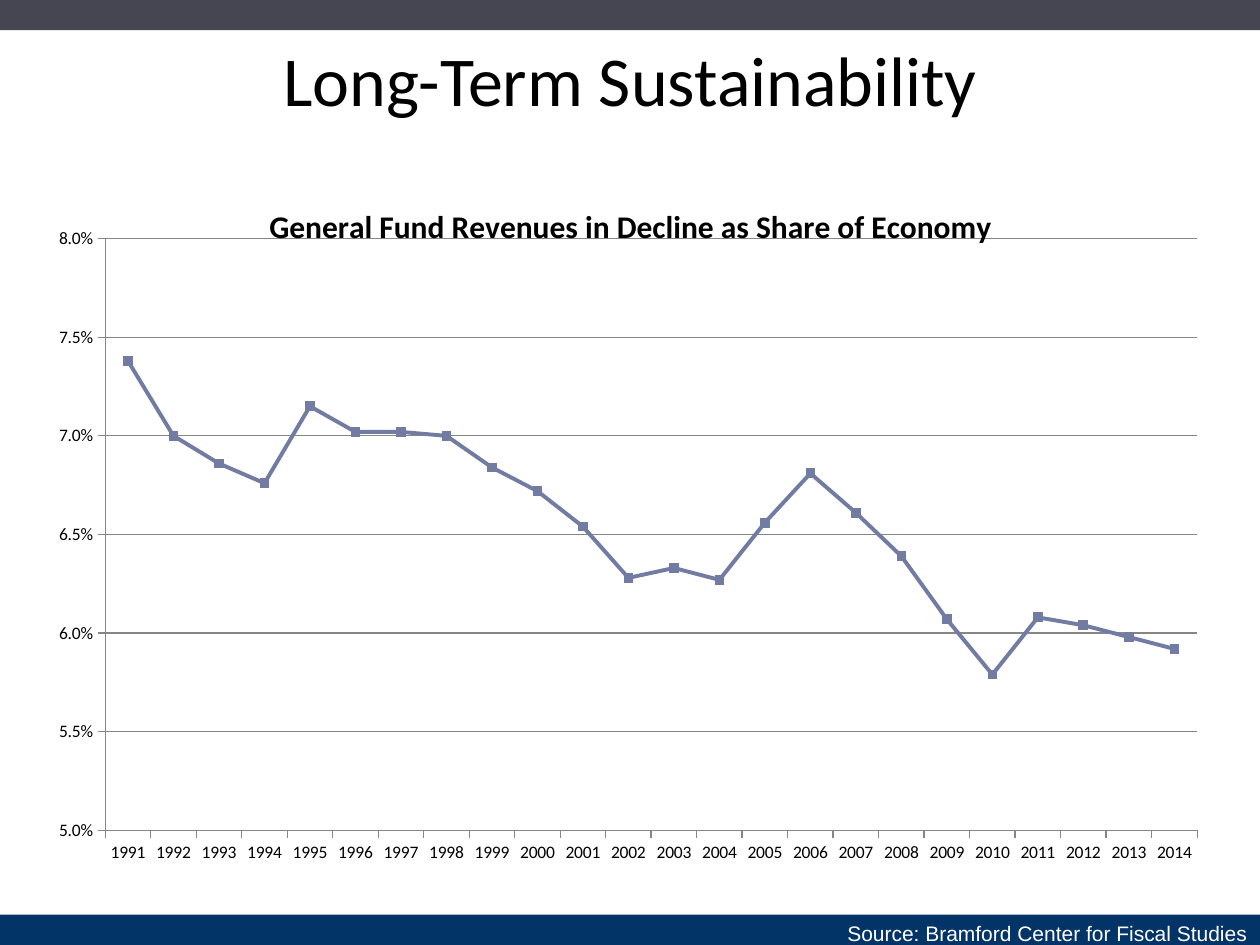
from dataclasses import dataclass

from lxml.etree import SubElement
from pptx import Presentation
from pptx.chart.chart import Chart
from pptx.chart.data import CategoryChartData
from pptx.dml.color import RGBColor
from pptx.enum.chart import XL_CHART_TYPE, XL_MARKER_STYLE, XL_TICK_MARK
from pptx.enum.shapes import MSO_SHAPE
from pptx.enum.text import MSO_ANCHOR, PP_ALIGN
from pptx.oxml.ns import qn
from pptx.slide import Slide
from pptx.text.text import TextFrame
from pptx.util import Inches, Pt

WIDTH, HEIGHT = Inches(10), Inches(7.5)
BAR_HEIGHT = Inches(0.24)
COLORS = {
    "header": "464653",
    "footer": "033468",
    "text": "000000",
    "source": "FFFFFF",
    "series": "727CA3",
    "axis": "868686",
}
FIRST_YEAR = 1991
REVENUE_SHARES = [
    0.0738, 0.07, 0.0686, 0.0676, 0.0715, 0.0702, 0.0702, 0.07,
    0.0684, 0.0672, 0.0654, 0.0628, 0.0633, 0.0627, 0.0656, 0.0681,
    0.0661, 0.0639, 0.0607, 0.0579, 0.0608, 0.0604, 0.0598, 0.0592,
]


@dataclass
class Bar:
    top: int
    color: str


BARS = [Bar(0, "header"), Bar(HEIGHT - BAR_HEIGHT, "footer")]


def rgb(name: str) -> RGBColor:
    return RGBColor.from_string(COLORS[name])


def draw_bar(slide: Slide, bar: Bar) -> None:
    shape = slide.shapes.add_shape(MSO_SHAPE.RECTANGLE, 0, bar.top, WIDTH, BAR_HEIGHT)
    shape.shadow.inherit = False
    shape.fill.solid()
    shape.fill.fore_color.rgb = rgb(bar.color)
    shape.line.fill.background()


def write(frame: TextFrame, text: str, *, font: str, size: float, color: str,
          align: PP_ALIGN = PP_ALIGN.CENTER, bold: bool = False) -> None:
    frame.text = text
    paragraph = frame.paragraphs[0]
    paragraph.alignment = align
    run_font = paragraph.runs[0].font
    run_font.name, run_font.size, run_font.bold = font, Pt(size), bold
    run_font.color.rgb = rgb(color)


def place(parent, **percents: float) -> None:
    """Set a manual chart layout, in percent of the chart's size."""
    layout = parent.find(qn("c:layout"))
    if layout is None:
        layout = parent.makeelement(qn("c:layout"))
        position = 1 if parent.tag == qn("c:title") else 0
        parent.insert(position, layout)
    for child in list(layout):
        layout.remove(child)
    manual = SubElement(layout, qn("c:manualLayout"))
    if "w" in percents:
        SubElement(manual, qn("c:layoutTarget")).set("val", "inner")
    for side in ("x", "y"):
        SubElement(manual, qn(f"c:{side}Mode")).set("val", "edge")
    for key, percent in percents.items():
        SubElement(manual, qn(f"c:{key}")).set("val", f"{percent / 100:.3f}")


def format_axes(chart: Chart) -> None:
    value_axis = chart.value_axis
    value_axis.minimum_scale, value_axis.maximum_scale = 0.05, 0.08
    value_axis.major_unit = 0.005
    value_axis.tick_labels.number_format = "0.0%"
    value_axis.tick_labels.number_format_is_linked = False
    value_axis.has_major_gridlines = True
    for axis in (chart.category_axis, value_axis):
        axis.major_tick_mark = XL_TICK_MARK.OUTSIDE
        axis.minor_tick_mark = XL_TICK_MARK.NONE
    for line in (chart.category_axis.format.line, value_axis.format.line,
                 value_axis.major_gridlines.format.line):
        line.color.rgb = rgb("axis")
        line.width = Pt(0.75)


def draw_chart(slide: Slide) -> None:
    data = CategoryChartData(number_format="0.0%")
    data.categories = [str(FIRST_YEAR + index) for index in range(len(REVENUE_SHARES))]
    data.add_series("Series 1", REVENUE_SHARES)
    chart = slide.shapes.add_chart(
        XL_CHART_TYPE.LINE_MARKERS, Inches(0.31), Inches(1.44),
        Inches(9.38), Inches(5.6), data).chart
    chart.has_legend = False
    chart.font.name, chart.font.size = "Calibri", Pt(10)
    chart.font.color.rgb = rgb("text")

    chart.has_title = True
    write(chart.chart_title.text_frame,
          "General Fund Revenues in Decline as Share of Economy",
          font="Calibri", size=18, color="text", bold=True)
    chart.chart_title.include_in_layout = True
    format_axes(chart)

    plot = chart.plots[0]
    plot.vary_by_categories = False
    series = plot.series[0]
    series.smooth = False
    series.format.line.color.rgb = rgb("series")
    series.format.line.width = Pt(2.25)
    series.marker.style, series.marker.size = XL_MARKER_STYLE.SQUARE, 5
    series.marker.format.fill.solid()
    series.marker.format.fill.fore_color.rgb = rgb("series")
    series.marker.format.line.color.rgb = rgb("series")

    chart_element = chart.element.find(qn("c:chart"))
    place(chart_element.find(qn("c:title")), x=19, y=2.4)
    place(chart_element.find(qn("c:plotArea")), x=5.6, y=8.1, w=92.4, h=83.9)


def main() -> None:
    presentation = Presentation()
    presentation.slide_width, presentation.slide_height = WIDTH, HEIGHT
    slide = presentation.slides.add_slide(presentation.slide_layouts.get_by_name("Title Only"))
    for bar in BARS:
        draw_bar(slide, bar)

    title = slide.shapes.title
    title.left, title.top = Inches(0.5), 0
    title.width, title.height = Inches(9), Inches(1.25)
    title.text_frame.vertical_anchor = MSO_ANCHOR.MIDDLE
    write(title.text_frame, "Long-Term Sustainability", font="Calibri", size=40, color="text")

    source = slide.shapes.add_textbox(
        Inches(0.85), HEIGHT - BAR_HEIGHT, Inches(9.15), Inches(0.61))
    source.text_frame.word_wrap = True
    write(source.text_frame, "Source: Bramford Center for Fiscal Studies",
          font="Arial", size=12, color="source", align=PP_ALIGN.RIGHT)

    draw_chart(slide)
    presentation.save("out.pptx")


if __name__ == "__main__":
    main()
